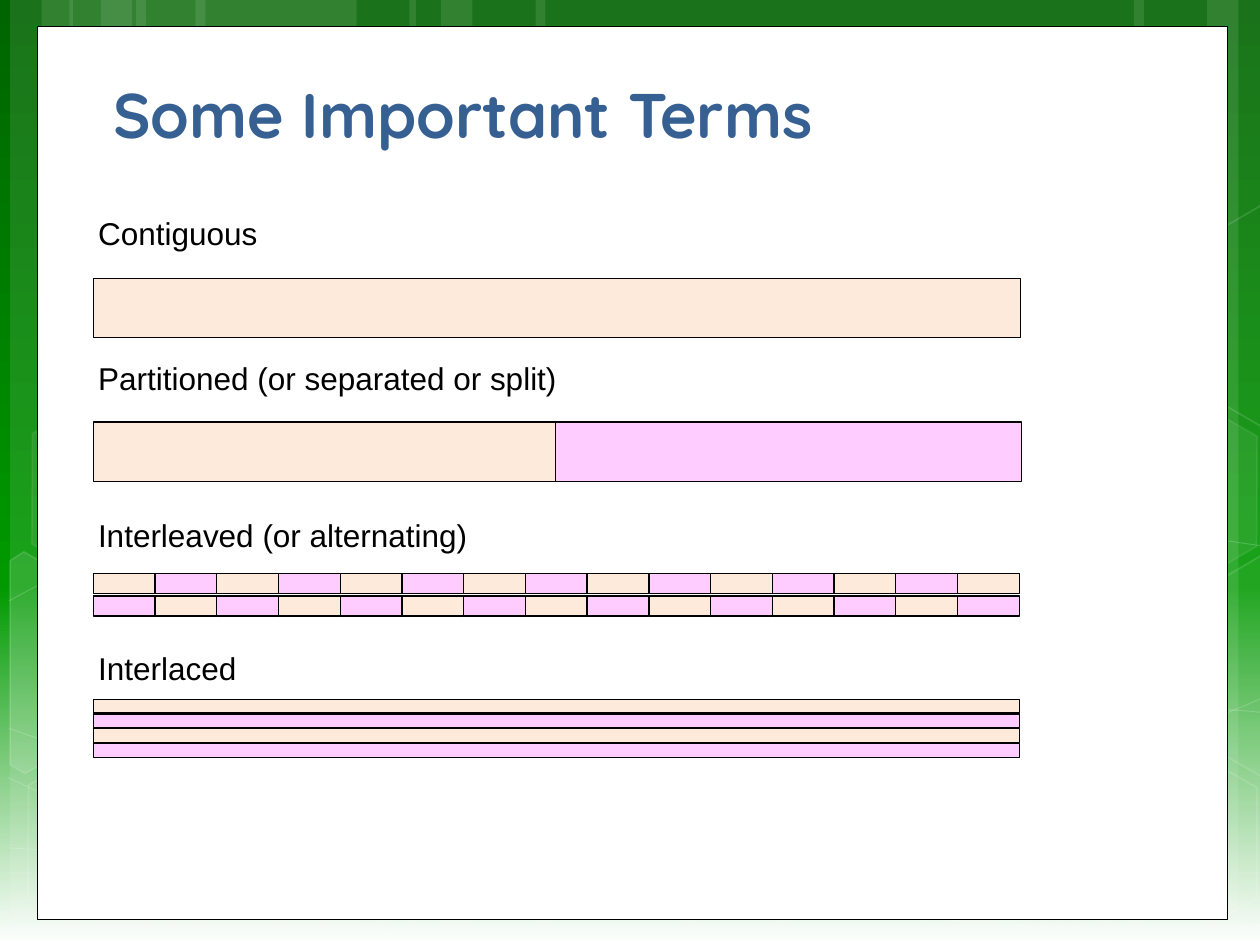
from copy import deepcopy

from lxml import etree
from pptx import Presentation
from pptx.dml.color import RGBColor
from pptx.enum.shapes import MSO_SHAPE
from pptx.enum.text import MSO_ANCHOR
from pptx.oxml.ns import qn
from pptx.util import Inches, Pt

RECT = MSO_SHAPE.RECTANGLE
HEXAGON = MSO_SHAPE.HEXAGON
BOTTOM = MSO_ANCHOR.BOTTOM
WHITE, BLACK, BLUE = "FFFFFF", "000000", "376092"
PEACH, PINK = "FDEADA", "FFCCFF"
LEFT, WIDTH = 0.74, 7.35
COLUMNS, STEP = 15, 0.49

# Left edge and width of the pale vertical strips
STRIPS = [
    (1.08, 1.75), (0.08, 0.5), (0.33, 0.83), (1.55, 1.75), (0.55, 0.5), (0.8, 0.83),
    (7.33, 1.75), (9.58, 0.5), (9, 0.83), (4.25, 3.08), (3.25, 0.5), (3.5, 0.83),
]
# Cubic curves: a start point, then three points for each piece
CURVES = [
    [(0.07, 6.73), (0.61, 6.76), (1.15, 6.79), (1.9, 6.78), (2.65, 6.77), (3.58, 6.75),
     (4.58, 6.65), (5.58, 6.55), (7, 6.36), (7.92, 6.17), (8.83, 5.98), (9.77, 5.68),
     (10.07, 5.51)],
    [(0.07, 4.77), (0.36, 4.61), (0.65, 4.46), (1.21, 4.31), (1.78, 4.16), (2.59, 3.94),
     (3.47, 3.87), (4.36, 3.8), (5.44, 3.79), (6.54, 3.87), (7.64, 3.95), (9.47, 4.26),
     (10.07, 4.34)],
    [(0.06, 6.17), (1.27, 6.72), (2.47, 7.27), (3.34, 7.49)],
    [(0.07, 5.78), (0.38, 5.89), (0.7, 6), (1.28, 6.16), (1.86, 6.31), (2.73, 6.56),
     (3.57, 6.73), (4.4, 6.9), (5.45, 7.08), (6.28, 7.18), (7.11, 7.29), (8, 7.33),
     (8.53, 7.36), (9.05, 7.4), (9.19, 7.38), (9.45, 7.38), (9.71, 7.37), (9.89, 7.35),
     (10.07, 7.34)],
    [(2.42, 7.49), (2.6, 7.29), (2.78, 7.09), (3.02, 6.91), (3.26, 6.73), (3.6, 6.53),
     (3.88, 6.39), (4.16, 6.25), (4.33, 6.19), (4.7, 6.09), (5.06, 5.99), (5.73, 5.85),
     (6.08, 5.78), (6.44, 5.71), (6.49, 5.71), (6.8, 5.69), (7.11, 5.66), (7.6, 5.63),
     (7.94, 5.62), (8.29, 5.61), (8.86, 5.62), (8.86, 5.62), (8.86, 5.62), (9.53, 5.62),
     (9.53, 5.62), (9.71, 5.63), (9.88, 5.64), (9.97, 5.65), (10.06, 5.66), (10.03, 5.65),
     (10.06, 5.66)],
]
# Left, top, fill opacity and line opacity
HEXES = [
    (3.34, 0.36, 4, 8), (4.97, 5.89, 6, 12), (0.11, 5.91, 0, 12), (0.14, 3.12, 7, 8),
    (1.74, 5.92, 0, 12), (8.34, 5.93, 0, 12), (8.34, 3.14, 7, 8),
]
# Hexagons cut off by the slide edge: points and fill opacity
CUT_HEXES = [
    ([(0.08, 4.45), (0.19, 4.38), (0.96, 4.82), (0.95, 5.7), (0.2, 6.14), (0.08, 6.07)], 10),
    ([(9.26, 4.85), (10.01, 4.41), (10.09, 4.46), (10.09, 6.13), (10.02, 6.17),
      (9.26, 5.73)], 4),
    ([(9.26, 2.07), (10.01, 1.63), (10.1, 1.68), (10.09, 3.35), (10.02, 3.39),
      (9.26, 2.95)], 0),
]


def rgb(code):
    return RGBColor.from_string(code)


def paint(fill, code, alpha=100):
    """Fill with a colour at an opacity in percent; 0 means no fill."""
    if not alpha:
        fill.background()
        return
    fill.solid()
    fill.fore_color.rgb = rgb(code)
    if alpha < 100:
        color = fill._xPr.find(qn("a:solidFill"))[0]
        etree.SubElement(color, qn("a:alpha"), val=str(alpha * 1000))


def style(shape, code, alpha=100, line=BLACK, weight=0.75, line_alpha=100):
    shape.shadow.inherit = False
    paint(shape.fill, code, alpha)
    paint(shape.line.fill, line, line_alpha)
    if line_alpha:
        shape.line.width = Pt(weight)


def add_box(slide, x, y, w, h, code, kind=RECT, **looks):
    shape = slide.shapes.add_shape(kind, Inches(x), Inches(y), Inches(w), Inches(h))
    style(shape, code, **looks)
    return shape


def add_path(slide, points, close, **looks):
    spots = [(Inches(x), Inches(y)) for x, y in points]
    pen = slide.shapes.build_freeform(*spots[0])
    pen.add_line_segments(spots[1:], close=close)
    shape = pen.convert_to_shape()
    style(shape, WHITE, line=WHITE, **looks)
    return shape


def bend(shape):
    """Turn each three line segments into one cubic curve."""
    lines = list(shape.element.iter(qn("a:lnTo")))
    for i in range(0, len(lines), 3):
        curve = etree.Element(qn("a:cubicBezTo"))
        lines[i].addprevious(curve)
        for line in lines[i:i + 3]:
            curve.append(line[0])
            line.getparent().remove(line)


def add_label(slide, text, x, y, w, h, font="Arial", size=18, code=BLACK, bold=False):
    box = slide.shapes.add_textbox(Inches(x), Inches(y), Inches(w), Inches(h))
    frame = box.text_frame
    frame.text = text
    face = frame.paragraphs[0].runs[0].font
    face.name, face.size, face.bold = font, Pt(size), bold
    face.color.rgb = rgb(code)
    return frame


def add_backdrop(slide):
    # Green gradient fading to white
    fill = slide.background.fill
    fill.gradient()
    fill.gradient_angle = 270
    stops = slide.element.find(".//" + qn("a:gsLst"))
    stops.append(deepcopy(stops[0]))
    for stop, place, code in zip(fill.gradient_stops, (0, 0.62, 1),
                                 ("006400", "009900", WHITE)):
        stop.position = place
        stop.color.rgb = rgb(code)

    # Strips, curves and hexagons
    for x, w in STRIPS:
        add_box(slide, x, 0, w, 7.5, WHITE, alpha=10, line_alpha=0)
    for knots in CURVES:
        bend(add_path(slide, knots, False, alpha=0, weight=0.5, line_alpha=20))
    for x, y, alpha, edge in HEXES:
        shape = add_box(slide, x, y, 1.75, 1.52, WHITE, HEXAGON, alpha=alpha,
                        line=WHITE, weight=1, line_alpha=edge)
        shape.rotation = 30
        shape.adjustments[0] = 0.285
    for points, alpha in CUT_HEXES:
        add_path(slide, points, True, alpha=alpha, weight=1, line_alpha=12)

    # White panel
    add_box(slide, 0.3, 0.21, 9.44, 7.09, WHITE, weight=0.5)


def add_terms(slide):
    for text, y, w in [("Contiguous", 1.65, 1.48),
                       ("Partitioned (or separated or split)", 2.8, 3.88),
                       ("Interleaved (or alternating)", 4.05, 3.16),
                       ("Interlaced", 5.1, 1.31)]:
        add_label(slide, text, 0.68, y, w, 0.4).word_wrap = False

    # Contiguous and partitioned bars
    add_box(slide, LEFT, 2.21, 7.36, 0.47, PEACH)
    add_box(slide, LEFT, 3.35, 3.71, 0.47, PEACH)
    add_box(slide, 4.41, 3.35, 3.7, 0.47, PINK)

    # Interleaved cells
    for row, y in enumerate((4.55, 4.73)):
        for col in range(COLUMNS):
            code = (PEACH, PINK)[(row + col) % 2]
            add_box(slide, LEFT + col * STEP, y, STEP, 0.16, code)

    # Interlaced lines
    for row, code in enumerate((PEACH, PINK) * 2):
        add_box(slide, LEFT, 5.55 + row * 0.35 / 3, WIDTH, 0.11, code)


def main():
    deck = Presentation()
    deck.slide_width, deck.slide_height = Inches(10), Inches(7.5)
    slide = deck.slides.add_slide(deck.slide_layouts[6])
    add_backdrop(slide)
    title = add_label(slide, "Some Important Terms", 0.8, 0.49, 8.42, 0.76,
                      "Quicksand", 36, BLUE, True)
    title.word_wrap = True
    title.vertical_anchor = BOTTOM
    add_terms(slide)
    deck.save("out.pptx")


if __name__ == "__main__":
    main()
